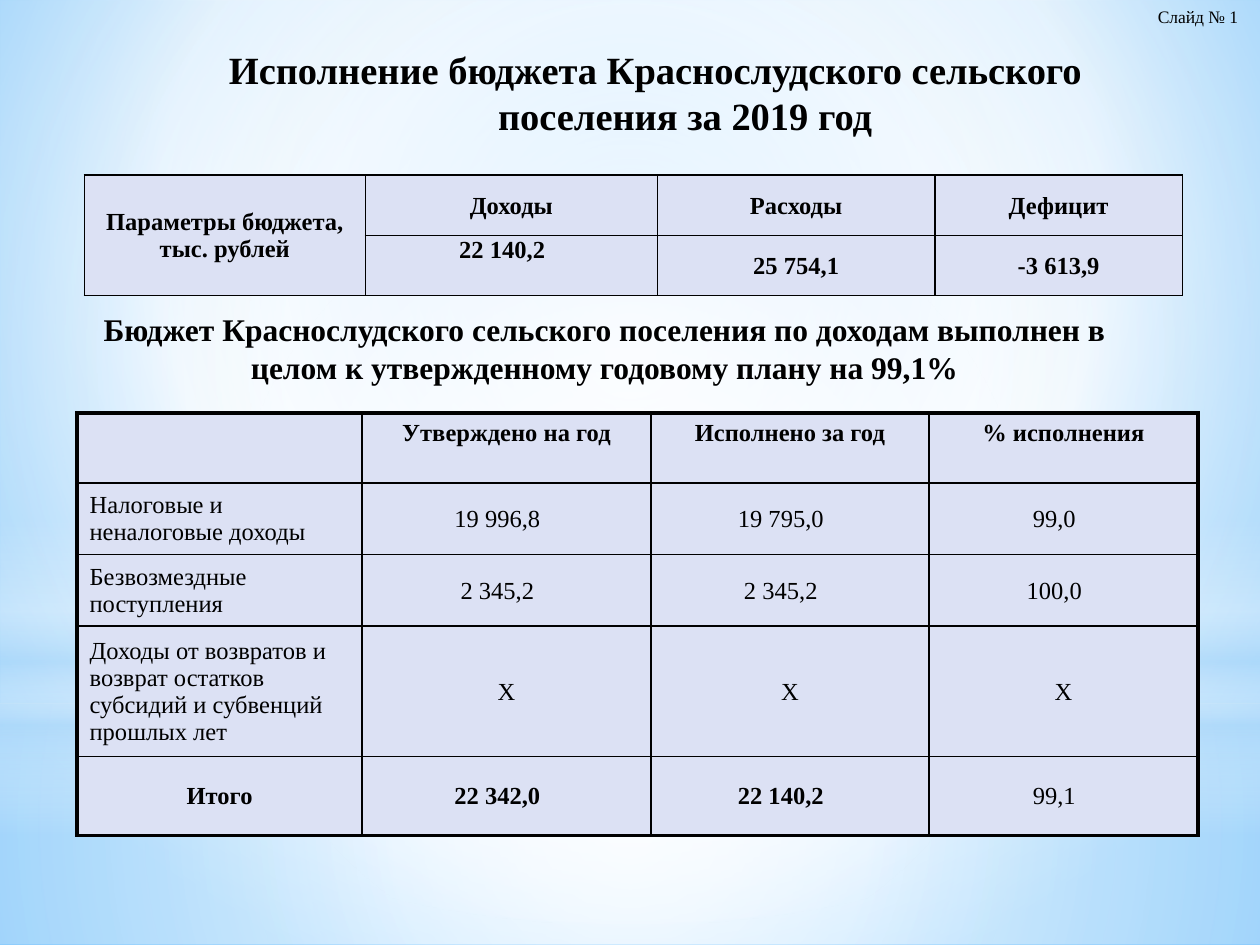
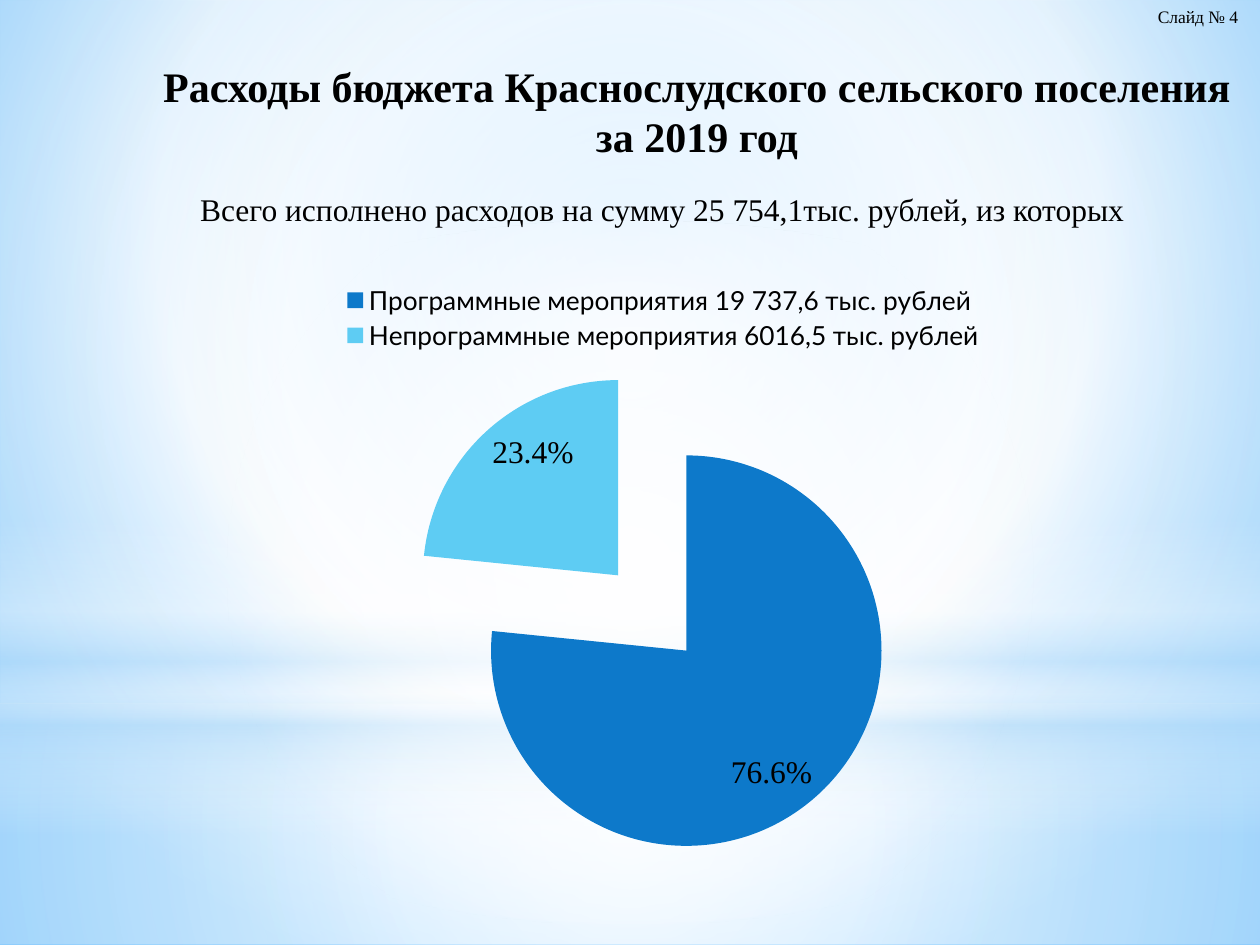
import pptx
import pptx.chart.data
import pptx.dml.color
import pptx.enum.chart
import pptx.enum.shapes
import pptx.enum.text
import pptx.oxml
import pptx.oxml.ns
import pptx.util

Pt = pptx.util.Pt
qn = pptx.oxml.ns.qn
ALIGN = pptx.enum.text.PP_ALIGN
ANCHOR = pptx.enum.text.MSO_ANCHOR
SHAPE = pptx.enum.shapes.MSO_SHAPE
SERIF = "Times New Roman"
BLACK, CELL_FILL = "000000", "DCE1F4"


def rgb(value):
    return pptx.dml.color.RGBColor.from_string(value)


def write(tf, text, size=18, bold=False, align=ALIGN.CENTER, anchor=ANCHOR.TOP):
    tf.word_wrap = True
    tf.vertical_anchor = anchor
    p = tf.paragraphs[0]
    p.text = text
    p.alignment = align
    for r in p.runs:
        r.font.name = SERIF
        r.font.size = Pt(size)
        r.font.bold = bold
        r.font.color.rgb = rgb(BLACK)
    return p


prs = pptx.Presentation()
prs.slide_width, prs.slide_height = Pt(720), Pt(540)
master = prs.slide_master
layout = prs.slide_layouts[5]
slides = [prs.slides.add_slide(layout) for _ in range(2)]
budget, spending = slides

master.background.fill.solid()
CENTER = (50, 50, 50, 50)
gradients = [
    (None, None, (20, 10, 20, 60),
     [(0, "9ED5FF", 100), (60, "FFFFFF", 100), (100, "5BB9FF", 100)]),
    (SHAPE.RECTANGLE, (0, 402, 720, 138), CENTER,
     [(0, "FFFFFF", 91), (37, "FFFFFF", 76), (100, "B4DCFA", 79)]),
    (SHAPE.RECTANGLE, (0, 0, 720, 402), CENTER,
     [(0, "FFFFFF", 89), (48, "FFFFFF", 62), (100, "B4DCFA", 79)]),
    (SHAPE.RECTANGLE, (0, 297, 720, 180), None,
     [(0, "FFFFFF", 0), (29, "FFFFFF", 30), (45, "B4DCFA", 40),
      (55, "FFFFFF", 26), (65, "B4DCFA", 60), (100, "FFFFFF", 0)]),
    (SHAPE.OVAL, (0, 126, 720, 402), CENTER,
     [(0, "FFFFFF", 100), (56, "FFFFFF", 0)]),
]
for i, (kind, box, focus, stops) in enumerate(gradients):
    if kind is None:
        holder = master.element.xpath("p:cSld/p:bg/p:bgPr")[0]
    else:
        sp = budget.shapes.add_shape(kind, *[Pt(v) for v in box])
        sp.shadow.inherit = False
        sp.line.fill.background()
        sp.fill.solid()
        sp.element.xpath(".//p:cNvPr")[0].set("id", str(100 + i))
        master.element.cSld.spTree.insert(1 + i, sp.element)
        holder = sp.element.spPr
    gs = "".join(
        f'<a:gs pos="{pos * 1000}"><a:srgbClr val="{color}">'
        f'<a:alpha val="{alpha * 1000}"/></a:srgbClr></a:gs>'
        for pos, color, alpha in stops)
    if focus:
        sides = " ".join(f'{side}="{v * 1000}"' for side, v in zip("ltrb", focus))
        direction = f'<a:path path="circle"><a:fillToRect {sides}/></a:path>'
    else:
        direction = '<a:lin ang="5400000" scaled="0"/>'
    grad = pptx.oxml.parse_xml(
        f'<a:gradFill {pptx.oxml.ns.nsdecls("a")} rotWithShape="1">'
        f'<a:gsLst>{gs}</a:gsLst>{direction}</a:gradFill>')
    holder.replace(holder.find(qn("a:solidFill")), grad)

titles = [
    (budget, "Исполнение бюджета Краснослудского сельского\nпоселения за 2019 год",
     22, (73.5, 22.5, 602, 60.5)),
    (spending, "Расходы бюджета Краснослудского сельского поселения за 2019 год",
     24, (76.5, 30, 643.5, 66.5)),
]
for s, text, size, box in titles:
    sp = s.shapes.title
    sp.left, sp.top, sp.width, sp.height = [Pt(v) for v in box]
    sp.text_frame.auto_size = pptx.enum.text.MSO_AUTO_SIZE.NONE
    write(sp.text_frame, text, size=size, bold=True, anchor=ANCHOR.MIDDLE)
pPr = budget.shapes.title.text_frame.paragraphs[0]._p.get_or_add_pPr()
pPr.set("marL", str(Pt(34)))
pPr.set("indent", str(-Pt(34)))

labels = [
    (budget, "Слайд № 1", 10, False, ALIGN.LEFT, (654.5, 0, 65.5, 19.5)),
    (spending, "Слайд № 4", 10, False, ALIGN.LEFT, (654.5, 0, 65.5, 19.5)),
    (budget, "Бюджет Краснослудского сельского поселения по доходам выполнен в "
     "целом к утвержденному годовому плану на 99,1%",
     18, True, ALIGN.CENTER, (36.5, 173.5, 618, 51)),
    (spending, "Всего исполнено расходов на сумму 25 754,1тыс. рублей, из которых",
     18, False, ALIGN.CENTER, (86.5, 105, 584, 29)),
]
for s, text, size, bold, align, box in labels:
    sp = s.shapes.add_textbox(*[Pt(v) for v in box])
    write(sp.text_frame, text, size=size, bold=bold, align=align)

parameters = dict(
    at=(48.25, 100), cols=[160.5, 167, 158.5, 141.5], rows=[34.5, 34.5], outer=1,
    texts=[["Параметры бюджета, тыс. рублей", "Доходы", "Расходы", "Дефицит"],
           ["", "22 140,2", "25 754,1", "-3 613,9"]],
    bold={(r, c) for r in range(2) for c in range(4)},
    roomy=set(), left=set(), top={(1, 1)}, shifted={(1, 1)})
income = dict(
    at=(44, 236), cols=[163, 165, 159, 153.5], rows=[40, 40.5, 41, 74, 45], outer=2.25,
    texts=[["", "Утверждено на год", "Исполнено за год", "% исполнения"],
           ["Налоговые и неналоговые доходы", "19 996,8", "19 795,0", "99,0"],
           ["Безвозмездные поступления", "2 345,2", "2 345,2", "100,0"],
           ["Доходы от возвратов и возврат остатков субсидий и субвенций прошлых лет",
            "Х", "Х", "Х"],
           ["Итого", "22 342,0", "22 140,2", "99,1"]],
    bold={(r, c) for r in (0, 4) for c in range(4)} - {(4, 3)},
    roomy={(r, c) for r in range(5) for c in range(4) if r == 0 or c == 0},
    left={(r, 0) for r in (1, 2, 3)},
    top={(0, c) for c in range(4)},
    shifted={(r, c) for r in (1, 2, 4) for c in (1, 2, 3)})

for t in (parameters, income):
    cols, rows = t["cols"], t["rows"]
    box = (*t["at"], sum(cols), sum(rows))
    table = budget.shapes.add_table(len(rows), len(cols), *[Pt(v) for v in box]).table
    table.first_row = table.horz_banding = False
    for column, width in zip(table.columns, cols):
        column.width = Pt(width)
    for row, height in zip(table.rows, rows):
        row.height = Pt(height)
    for r, texts in enumerate(t["texts"]):
        for c, text in enumerate(texts):
            cell, at = table.cell(r, c), (r, c)
            if at not in t["roomy"]:
                cell.margin_left = cell.margin_top = Pt(0.7)
                cell.margin_right = Pt(11.2 if at in t["shifted"] else 0.7)
                cell.margin_bottom = Pt(0)
            edges = {"L": c == 0, "R": c == len(cols) - 1,
                     "T": r == 0, "B": r == len(rows) - 1}
            tcPr = cell._tc.get_or_add_tcPr()
            for side, is_outer in edges.items():
                width = Pt(t["outer"] if is_outer else 1)
                tcPr.append(pptx.oxml.parse_xml(
                    f'<a:ln{side} {pptx.oxml.ns.nsdecls("a")} w="{width}"><a:solidFill>'
                    f'<a:srgbClr val="{BLACK}"/></a:solidFill></a:ln{side}>'))
            cell.fill.solid()
            cell.fill.fore_color.rgb = rgb(CELL_FILL)
            if text:
                write(cell.text_frame, text, size=14, bold=at in t["bold"],
                      align=ALIGN.LEFT if at in t["left"] else ALIGN.CENTER)
            cell.vertical_anchor = ANCHOR.TOP if at in t["top"] else ANCHOR.MIDDLE
table_frames = [sp for sp in budget.shapes if sp.has_table]
first = table_frames[0].table
first.cell(0, 0).merge(first.cell(1, 0))

data = pptx.chart.data.CategoryChartData()
data.categories = ["Программные мероприятия 19 737,6 тыс. рублей",
                   "Непрограммные мероприятия 6016,5 тыс. рублей"]
data.add_series("Series 1", (76.6, 23.4))
chart = spending.shapes.add_chart(
    pptx.enum.chart.XL_CHART_TYPE.PIE_EXPLODED,
    Pt(60), Pt(157), Pt(625.5), Pt(351.5), data).chart
chart.has_title = False
chart.font.name = "Lato"
chart.font.size = Pt(18)
chart.font.color.rgb = rgb(BLACK)
chart.has_legend = True
chart.legend.position = pptx.enum.chart.XL_LEGEND_POSITION.RIGHT
chart.legend.include_in_layout = False
chart.legend.font.name = "Lato"
chart.legend.font.size = Pt(15)
chart.legend.font.color.rgb = rgb(BLACK)

plot = chart.plots[0]
plot.vary_by_categories = True
for i, color in enumerate(("0D79CA", "5ECCF3")):
    fill = plot.series[0].points[i].format.fill
    fill.solid()
    fill.fore_color.rgb = rgb(color)
for explosion in chart.element.xpath(".//c:explosion"):
    explosion.set("val", "26")
plot.has_data_labels = True
dl = plot.data_labels
dl.show_percentage = True
dl.show_value = False
dl.number_format = "0.0%"
dl.number_format_is_linked = False
dl.position = pptx.enum.chart.XL_LABEL_POSITION.INSIDE_END
dl.font.name = SERIF
dl.font.size = Pt(18)
dl.font.color.rgb = rgb(BLACK)

areas = [("c:plotArea", 0, '<c:layoutTarget val="inner"/>', (0.14, 0.15, 0.72, 0.8)),
         ("c:legend", 1, "", (0.18, 0.01, 0.66, 0.12))]
for tag, index, target, place in areas:
    area = chart.element.xpath(f".//{tag}")[0]
    for old in area.findall(qn("c:layout")):
        area.remove(old)
    modes = "".join(f'<c:{k}Mode val="edge"/>' for k in "xy")
    values = "".join(f'<c:{k} val="{v}"/>' for k, v in zip("xywh", place))
    area.insert(index, pptx.oxml.parse_xml(
        f'<c:layout {pptx.oxml.ns.nsdecls("c")}><c:manualLayout>'
        f'{target}{modes}{values}</c:manualLayout></c:layout>'))

prs.save("out.pptx")
